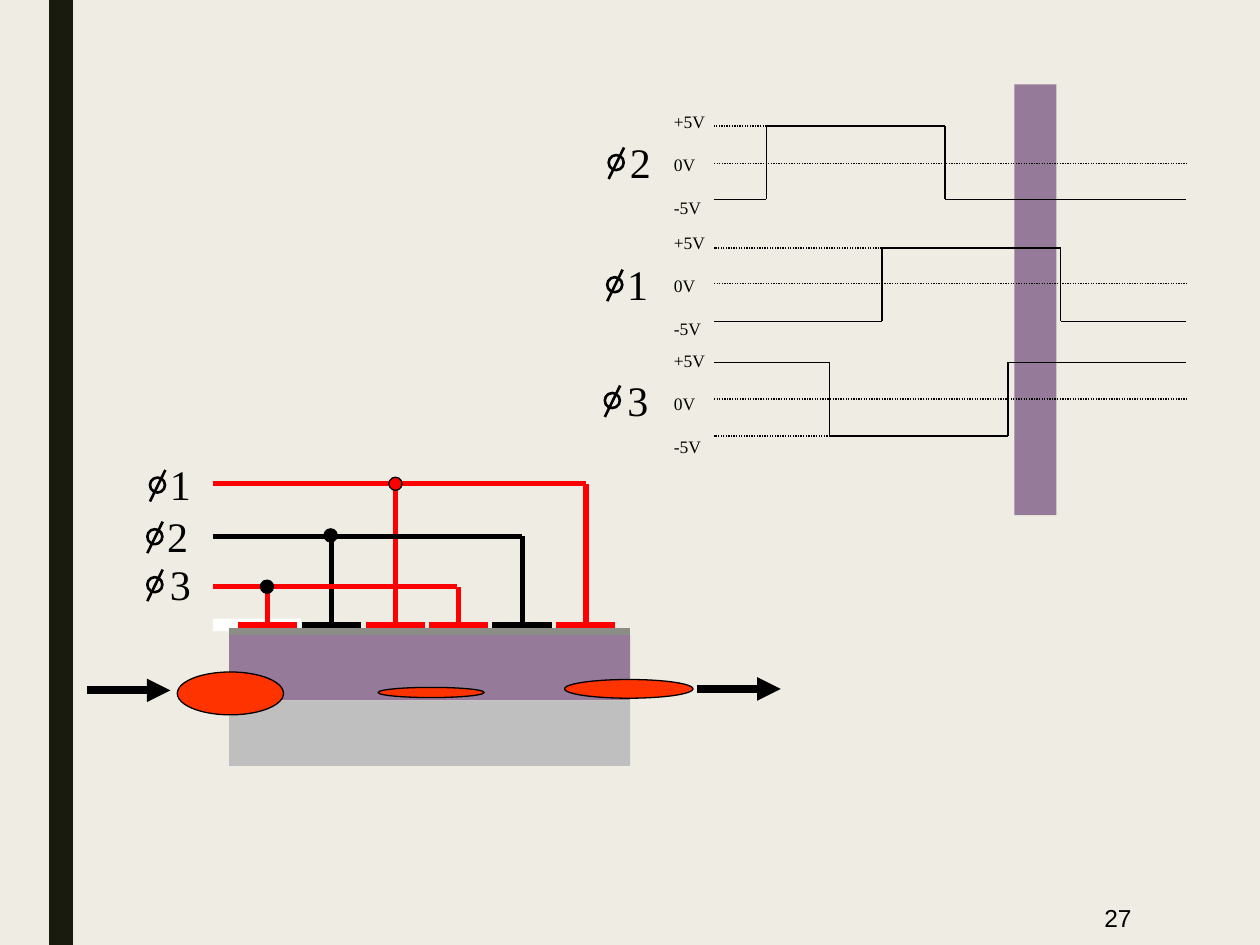
import pptx
import pptx.util
import pptx.dml.color
import pptx.enum.dml
import pptx.enum.shapes
import pptx.enum.text
import pptx.oxml
import pptx.oxml.ns
import lxml.etree

Pt = pptx.util.Pt
RGB = pptx.dml.color.RGBColor.from_string
Kind = pptx.enum.shapes.MSO_SHAPE
Align = pptx.enum.text.PP_ALIGN
Anchor = pptx.enum.text.MSO_ANCHOR
qn = pptx.oxml.ns.qn

hues = {
    "paper": "EFEDE3", "bar": "191B0E", "purple": "957A99", "red": "FF0000",
    "black": "000000", "white": "FFFFFF", "silver": "BFBFBF",
    "oxide": "8C8D86", "charge": "FF3300",
}

deck = pptx.Presentation()
deck.slide_width, deck.slide_height = Pt(720), Pt(540)
slide = deck.slides.add_slide(deck.slide_layouts[6])
slide.background.fill.solid()
slide.background.fill.fore_color.rgb = RGB(hues["paper"])


def shape(kind, x, y, w, h, fill=None, edge=0):
    item = slide.shapes.add_shape(kind, Pt(x), Pt(y), Pt(w), Pt(h))
    item.shadow.inherit = False
    if fill:
        item.fill.solid()
        item.fill.fore_color.rgb = RGB(hues[fill])
    else:
        item.fill.background()
    if edge:
        item.line.color.rgb = RGB(hues["black"])
        item.line.width = Pt(edge)
    else:
        item.line.fill.background()


def line(x1, y1, x2, y2, hue="black", width=0.75, dots=False, arrow=False):
    item = slide.shapes.add_connector(
        pptx.enum.shapes.MSO_CONNECTOR.STRAIGHT, Pt(x1), Pt(y1), Pt(x2), Pt(y2))
    item.line.color.rgb = RGB(hues[hue])
    item.line.width = Pt(width)
    if dots:
        item.line.dash_style = pptx.enum.dml.MSO_LINE.ROUND_DOT
    if arrow:
        lxml.etree.SubElement(item.line._get_or_add_ln(), qn("a:tailEnd"), type="triangle")
    lxml.etree.SubElement(item._element.spPr, qn("a:effectLst"))


for x, y, w, h, fill in [
    (28.1, 0, 13.6, 540, "bar"),
    (579.6, 48.2, 24, 246.2, "purple"),
    (130.9, 362.9, 229.2, 37.4, "purple"),
    (121.7, 353.5, 50.4, 7.2, "white"),
    (130.9, 400.3, 229.2, 37.4, "silver"),
]:
    shape(Kind.RECTANGLE, x, y, w, h, fill)

gate = 357.5
buses = [(335.2, "red", 261.4), (306.5, "black", 298.1), (276.5, "red", 334.8)]
for start in (136, 244.9):
    for i, (y, hue, end) in enumerate(buses):
        x = start + 36.5 * i
        line(x, gate, x + 33.8, gate, hue, 4.5)
        line(x + 17, gate, x + 17, y, hue, 3)

shape(Kind.OVAL, 216, 392.8, 60.7, 5.8, "charge", 0.75)
line(130.9, 360.9, 360, 360.9, "oxide", 4.5)
for y, hue, end in reversed(buses):
    line(end, y, 121.7, y, hue, 3)
for x, y, fill in [(222.2, 272.7, "red"), (185.2, 302.2, "black"), (148.8, 331.5, "black")]:
    shape(Kind.OVAL, x, y, 7.5, 7.5, fill, 0.75)
shape(Kind.OVAL, 322.6, 388.3, 73.4, 10.7, "charge", 0.75)

left, right = 408, 678
waves = [
    (249.1, 228.1, 207, 473.9, 576, 508.3),
    (183.6, 162, 141.7, 504, 606.1, 508.3),
    (113.9, 93.5, 72, 438, 540, 438),
]
for low, mid, high, up, down, stop in waves:
    rest, pulse = (high, low) if up < 500 and down > 560 else (low, high)
    line(left, mid, right, mid, dots=True)
    line(left, rest, up, rest)
    line(up, pulse, down, pulse)
    line(down, rest, right, rest)
    for x in (up, down):
        line(x, high, x, low)
    line(stop, pulse, left, pulse, dots=True)

serif = "Times New Roman"
texts = [(559.4, 508.3, 94.3, 31.7, ["27"], 14, "Arial", Align.RIGHT, Anchor.MIDDLE)]
for y in (59.9, 129, 196.6):
    texts.append((378, y, 32.4, 67, ["+5V", "0V", "-5V"], 10, serif, Align.LEFT, Anchor.TOP))
for digit, x, y, gap in [
    ("1", 85.7, 272.9, 4.3), ("2", 84.2, 302.4, 4.3), ("3", 84.2, 329.8, 5.8),
    ("1", 347, 158.4, 4.3), ("2", 347.8, 88.6, 5), ("3", 345.6, 224.6, 5.8),
]:
    shape(Kind.OVAL, x, y, 8.6, 8.6, edge=1.5)
    line(x + 8.8, y - 4.3, x, y + 13.7, width=1.5)
    texts.append((x + gap, y - 14.2, 26.6, 36, [digit], 24, serif, Align.LEFT, Anchor.TOP))

for x, y, w, h, rows, size, font, align, anchor in texts:
    frame = slide.shapes.add_textbox(Pt(x), Pt(y), Pt(w), Pt(h)).text_frame
    frame.word_wrap = len(rows[0]) == 2
    frame.vertical_anchor = anchor
    for i, row in enumerate(rows):
        para = frame.add_paragraph() if i else frame.paragraphs[0]
        para.alignment = align
        if i:
            para.space_before = Pt(12.5)
        run = para.add_run()
        run.text = row
        run.font.size = Pt(size)
        run.font.name = font
        run.font.color.rgb = RGB(hues["black"])

shape(Kind.OVAL, 101.3, 384, 60.7, 24.5, "charge", 0.75)
line(398.2, 393.7, 446.2, 393.7, width=4.5, arrow=True)
line(49.6, 394.5, 97.4, 394.5, width=4.5, arrow=True)

deck.save("out.pptx")
